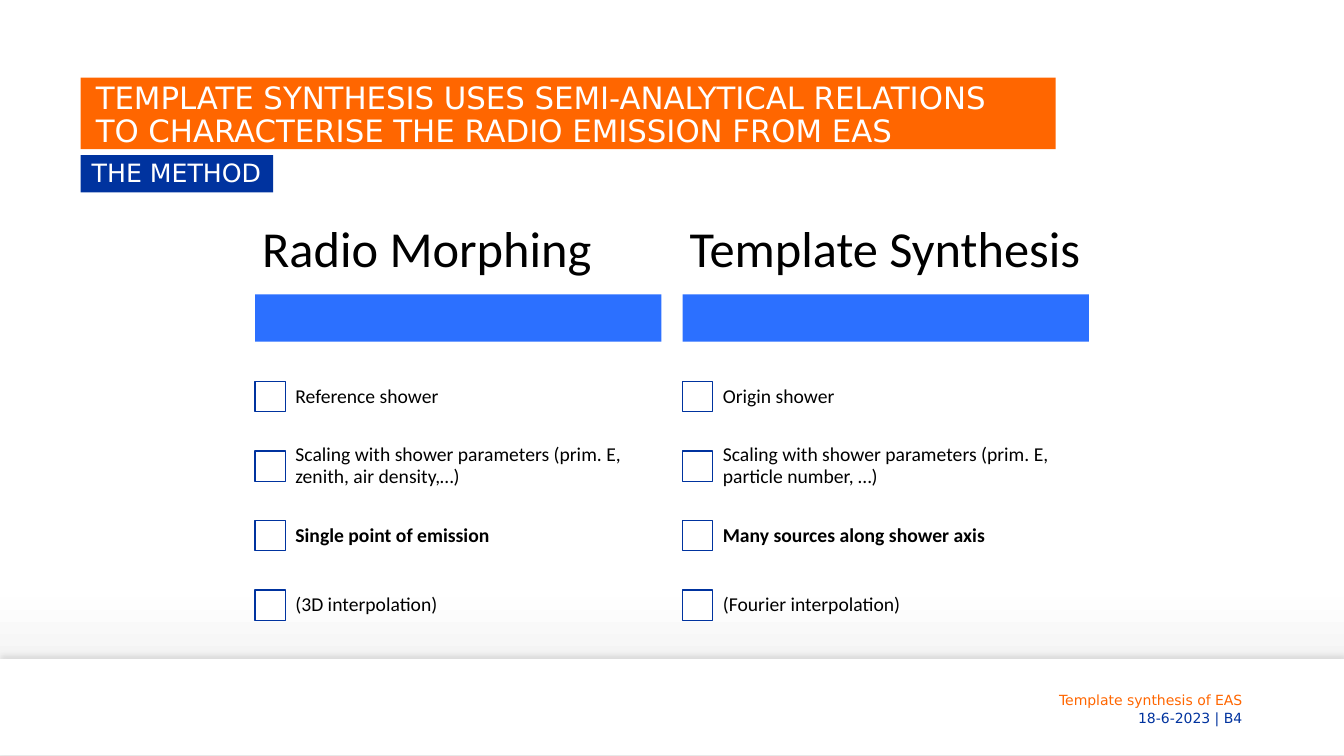
import copy
from dataclasses import dataclass

import lxml.etree
import pptx
import pptx.dml.color
import pptx.enum.shapes
import pptx.enum.text
import pptx.oxml.ns
import pptx.util

Inches = pptx.util.Inches
qn = pptx.oxml.ns.qn
ANCHOR = pptx.enum.text.MSO_ANCHOR
ALIGN = pptx.enum.text.PP_ALIGN


@dataclass(frozen=True)
class Theme:
    """Colours, fonts and type sizes of the slide."""
    orange: str = "FF6600"
    navy: str = "00339F"
    blue: str = "2C70FF"
    white: str = "FFFFFF"
    black: str = "000000"
    backdrop: tuple = ((0, "FFFFFF"), (0.79, "FEFEFE"), (0.92, "EDEDED"))
    display: str = "DejaVu Sans"
    body: str = "Calibri"
    title: int = 22
    subtitle: int = 18
    heading: int = 36
    item: int = 14
    footer: int = 10


THEME = Theme()


def rgb(value):
    """Turn a hex string into a colour."""
    return pptx.dml.color.RGBColor.from_string(value)


def write(sp, lines, font, size, color, margins, anchor=ANCHOR.MIDDLE,
          align=ALIGN.LEFT, spacing=0.9, bold=False):
    """Fill a shape with one paragraph of one or more lines."""
    tf = sp.text_frame
    tf.word_wrap = True
    tf.auto_size = pptx.enum.text.MSO_AUTO_SIZE.NONE
    tf.vertical_anchor = anchor
    tf.margin_left, tf.margin_top, tf.margin_right, tf.margin_bottom = map(Inches, margins)
    p = tf.paragraphs[0]
    p.alignment = align
    p.line_spacing = spacing
    for i, line in enumerate(lines):
        if i:
            p.add_line_break()
        r = p.add_run()
        r.text = line
        r.font.name = font
        r.font.size = pptx.util.Pt(size)
        r.font.bold = bold
        r.font.color.rgb = rgb(color)


def add_text(s, box, *args, **kwargs):
    """Add a text box holding one line."""
    sp = s.shapes.add_textbox(*map(Inches, box))
    write(sp, *args, **kwargs)
    return sp


def add_rect(s, box, fill, line=None):
    """Add a flat rectangle, outlined if a line colour is given."""
    sp = s.shapes.add_shape(pptx.enum.shapes.MSO_SHAPE.RECTANGLE, *map(Inches, box))
    sp.shadow.inherit = False
    sp.fill.solid()
    sp.fill.fore_color.rgb = rgb(fill)
    if line:
        sp.line.color.rgb = rgb(line)
        sp.line.width = pptx.util.Pt(1)
    else:
        sp.line.fill.background()
    return sp


def add_background(s):
    """Shade the slide from white down to light grey."""
    fill = s.background.fill
    fill.gradient()
    fill.gradient_angle = 270
    stops = s.element.find(".//" + qn("a:gsLst"))
    stops.append(copy.deepcopy(stops[-1]))
    for stop, (position, color) in zip(fill.gradient_stops, THEME.backdrop):
        stop.position = position
        stop.color.rgb = rgb(color)


def add_footer(s, box):
    """Add the white footer band with its shadow and two lines of text."""
    x, y, w, h = box
    band = add_rect(s, box, THEME.white)
    effects = band.element.spPr.find(qn("a:effectLst"))
    shadow = lxml.etree.SubElement(effects, qn("a:outerShdw"), blurRad=str(pptx.util.Pt(4)),
                                   dist=str(pptx.util.Pt(3)), dir="16200000", rotWithShape="0")
    color = lxml.etree.SubElement(shadow, qn("a:srgbClr"), val=THEME.black)
    lxml.etree.SubElement(color, qn("a:alpha"), val="10000")
    lines = (("Template synthesis of EAS", THEME.orange), ("18-6-2023 | B4", THEME.navy))
    for i, (text, ink) in enumerate(lines):
        add_text(s, (x + w - 3.91, y + 0.31 + 0.18 * i, 3, 0.18), [text], THEME.display,
                 THEME.footer, ink, (0.1, 0, 0.1, 0), align=ALIGN.RIGHT, spacing=1)


def add_header(s, box):
    """Place the orange title with the navy subtitle tag below it."""
    x, y, w, h = box
    title = s.shapes.title
    title.left, title.top, title.width, title.height = map(Inches, box)
    title.fill.solid()
    title.fill.fore_color.rgb = rgb(THEME.orange)
    write(title, ["TEMPLATE SYNTHESIS USES SEMI-ANALYTICAL RELATIONS ",
                  "TO CHARACTERISE THE RADIO EMISSION FROM EAS"],
          THEME.display, THEME.title, THEME.white, (0.15, 0.04, 0.16, 0), ANCHOR.BOTTOM)
    tag = add_text(s, (x, y + h + 0.06, 1.91, 0.37), ["THE METHOD"], THEME.display,
                   THEME.subtitle, THEME.white, (0.11, 0.04, 0, 0.04), ANCHOR.TOP, spacing=0.95)
    tag.fill.solid()
    tag.fill.fore_color.rgb = rgb(THEME.navy)


def add_checklist(s, box, heading, items, key_item):
    """Add a heading, a blue bar and evenly spaced check boxes with labels."""
    x, y, w, h = box
    head_h, bar_h, row_h, square = 0.85, 0.47, 0.69, 0.3
    add_text(s, (x, y, w, head_h), [heading], THEME.body, THEME.heading, THEME.black,
             (0.07, 0.05, 0.07, 0.05))
    add_rect(s, (x, y + head_h, w, bar_h), THEME.blue)
    first = y + h - row_h * len(items)
    for i, item in enumerate(items):
        top = first + row_h * i
        add_rect(s, (x, top + (row_h - square) / 2, square, square), THEME.white, THEME.navy)
        add_text(s, (x + 0.29, top, w - 0.29, row_h), [item], THEME.body, THEME.item,
                 THEME.black, (0.11,) * 4, bold=item == key_item)


def main():
    """Build the slide and save it."""
    prs = pptx.Presentation()
    prs.slide_width, prs.slide_height = Inches(13.33), Inches(7.5)
    s = prs.slides.add_slide(prs.slide_layouts[5])
    add_background(s)
    add_footer(s, (0, 6.54, 13.33, 0.95))
    add_header(s, (0.8, 0.77, 9.67, 0.71))
    add_checklist(s, (2.53, 2.07, 4.03, 4.28), "Radio Morphing", [
        "Reference shower",
        "Scaling with shower parameters (prim. E, zenith, air density,…)",
        "Single point of emission",
        "(3D interpolation)"], "Single point of emission")
    add_checklist(s, (6.77, 2.07, 4.03, 4.28), "Template Synthesis", [
        "Origin shower",
        "Scaling with shower parameters (prim. E, particle number, …)",
        "Many sources along shower axis",
        "(Fourier interpolation)"], "Many sources along shower axis")
    prs.save("out.pptx")


if __name__ == "__main__":
    main()
